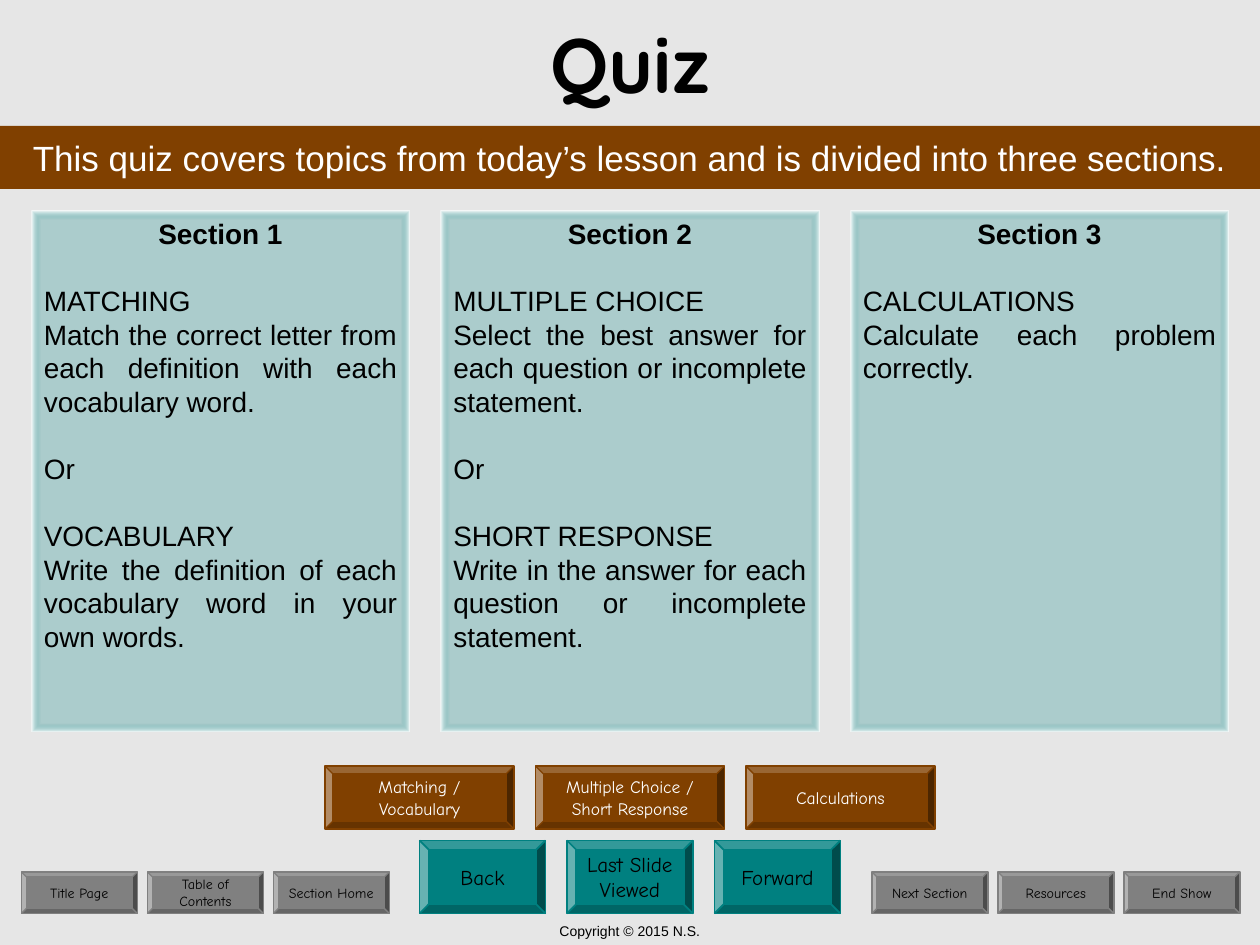
from pptx import Presentation
from pptx.dml.color import RGBColor
from pptx.enum.shapes import MSO_SHAPE as Shape
from pptx.enum.text import MSO_ANCHOR as Anchor, PP_ALIGN as Align
from pptx.oxml import parse_xml
from pptx.util import Inches, Pt

COLORS = {"page": "E6E6E6", "black": "000000", "white": "FFFFFF",
          "brown": "804000", "teal": "008080", "gray": "808080"}
BODY_FONT, BUTTON_FONT, TITLE_FONT = "Arial", "Comic Neue", "Quicksand"

TITLE = "Quiz"
INTRO = "This quiz covers topics from today’s lesson and is divided into three sections."
COPYRIGHT = "Copyright © 2015 N.S."
SECTIONS = [
    ["Section 1",
     ("MATCHING", "Match the correct letter from each definition with each vocabulary word."),
     ("Or",),
     ("VOCABULARY", "Write the definition of each vocabulary word in your own words.")],
    ["Section 2",
     ("MULTIPLE CHOICE", "Select the best answer for each question or incomplete statement."),
     ("Or",),
     ("SHORT RESPONSE", "Write in the answer for each question or incomplete statement.")],
    ["Section 3",
     ("CALCULATIONS", "Calculate each problem correctly.")],
]
BUTTON_ROWS = [
    {"labels": ["Title Page", "Table of\nContents", "Section Home"], "left": 0.17, "top": 6.92,
     "pitch": 1, "size": (0.92, 0.33), "fill": "gray", "ink": "black", "points": 8, "border": 0.75},
    {"labels": ["Next Section", "Resources", "End Show"], "left": 6.92, "top": 6.92,
     "pitch": 1, "size": (0.92, 0.33), "fill": "gray", "ink": "black", "points": 8, "border": 0.75},
    {"labels": ["Back", "Last Slide\nViewed", "Forward"], "left": 3.33, "top": 6.67,
     "pitch": 1.17, "size": (1, 0.58), "fill": "teal", "ink": "black", "points": 12, "border": 1},
    {"labels": ["Matching /\nVocabulary", "Multiple Choice /\nShort Response", "Calculations"],
     "left": 2.58, "top": 6.08, "pitch": 1.67, "size": (1.5, 0.5),
     "fill": "brown", "ink": "white", "points": 10, "border": 0.75},
]
PANEL_LEFT, PANEL_TOP, PANEL_PITCH, PANEL_SIZE = 0.25, 1.67, 3.25, (3, 4.14)
PANEL_POINTS, PANEL_LEADING = 16, 19.2
PANEL_FILL = f"""
<a:gradFill xmlns:a="http://schemas.openxmlformats.org/drawingml/2006/main" rotWithShape="1">
  <a:gsLst>
    <a:gs pos="95000"><a:srgbClr val="{COLORS['teal']}"><a:alpha val="25000"/></a:srgbClr></a:gs>
    <a:gs pos="100000"><a:srgbClr val="{COLORS['white']}"/></a:gs>
  </a:gsLst>
  <a:path path="shape"><a:fillToRect l="50000" t="50000" r="50000" b="50000"/></a:path>
</a:gradFill>"""


def color(name):
    return RGBColor.from_string(COLORS[name])


def format_text(frame, font, points, ink="black", bold=False, align=Align.CENTER):
    for paragraph in frame.paragraphs:
        paragraph.alignment = align
        for run in paragraph.runs:
            run.font.name, run.font.size, run.font.bold = font, Pt(points), bold
            run.font.color.rgb = color(ink)


def add_block(slide, kind, left, top, width, height, fill, border=0):
    block = slide.shapes.add_shape(kind, Inches(left), Inches(top), Inches(width), Inches(height))
    block.shadow.inherit = False
    block.fill.solid()
    block.fill.fore_color.rgb = color(fill)
    if border:
        block.line.color.rgb = color(fill)
        block.line.width = Pt(border)
    else:
        block.line.fill.background()
    block.text_frame.vertical_anchor = Anchor.MIDDLE
    return block


def add_buttons(slide, row):
    for i, label in enumerate(row["labels"]):
        button = add_block(slide, Shape.BEVEL, row["left"] + i * row["pitch"], row["top"],
                           *row["size"], row["fill"], row["border"])
        button.text_frame.word_wrap = False
        button.text_frame.text = label
        format_text(button.text_frame, BUTTON_FONT, row["points"], row["ink"])


def add_panel(slide, index, heading, groups):
    panel = add_block(slide, Shape.RECTANGLE, PANEL_LEFT + index * PANEL_PITCH, PANEL_TOP,
                      *PANEL_SIZE, "teal")
    solid = panel.fill.fore_color and panel._element.spPr.find(
        "{http://schemas.openxmlformats.org/drawingml/2006/main}solidFill")
    panel._element.spPr.replace(solid, parse_xml(PANEL_FILL))
    frame = panel.text_frame
    frame.vertical_anchor = Anchor.TOP
    frame.text = "\n".join([heading] + [line for group in groups for line in group])
    format_text(frame, BODY_FONT, PANEL_POINTS, align=Align.JUSTIFY)
    openers = {group[0] for group in groups}
    for paragraph in frame.paragraphs:
        paragraph.line_spacing = Pt(PANEL_LEADING)
        if paragraph.text in openers:
            paragraph.space_before = Pt(PANEL_LEADING)
    frame.paragraphs[0].alignment = Align.CENTER
    frame.paragraphs[0].runs[0].font.bold = True


def main():
    """Build the quiz overview slide."""
    deck = Presentation()
    deck.slide_width, deck.slide_height = Inches(10), Inches(7.5)
    slide = deck.slides.add_slide(deck.slide_layouts[5])
    slide.background.fill.solid()
    slide.background.fill.fore_color.rgb = color("page")

    title = slide.shapes.title
    title.left, title.top, title.width, title.height = 0, 0, Inches(10), Inches(1)
    title.text_frame.text = TITLE
    title.text_frame.vertical_anchor = Anchor.MIDDLE
    format_text(title.text_frame, TITLE_FONT, 44, bold=True)

    credit = slide.shapes.add_textbox(0, Inches(7.27), Inches(10), Inches(0.23))
    credit.text_frame.word_wrap = True
    credit.text_frame.text = COPYRIGHT
    format_text(credit.text_frame, BODY_FONT, 8)

    for row in BUTTON_ROWS:
        add_buttons(slide, row)

    banner = add_block(slide, Shape.RECTANGLE, 0, 1, 10, 0.5, "brown")
    banner.text_frame.text = INTRO
    format_text(banner.text_frame, BODY_FONT, 20, "white")

    for index, (heading, *groups) in enumerate(SECTIONS):
        add_panel(slide, index, heading, groups)

    deck.save("out.pptx")


if __name__ == "__main__":
    main()
